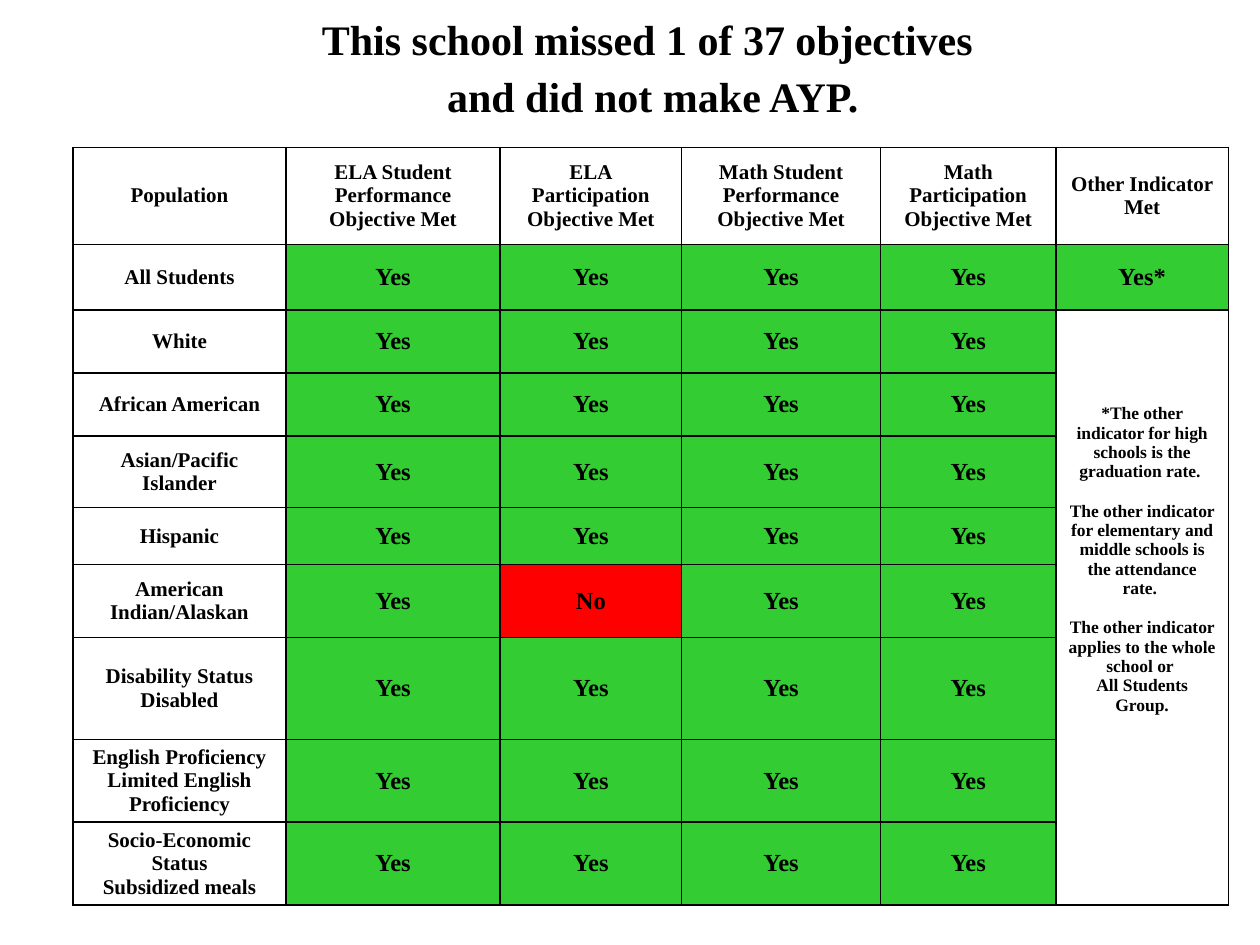
from lxml import etree
from pptx import Presentation, util as u
from pptx.dml.color import RGBColor
from pptx.enum import text
from pptx.oxml import ns

BLACK = RGBColor(0x00, 0x00, 0x00)
WHITE = RGBColor(0xFF, 0xFF, 0xFF)
GREEN = RGBColor(0x33, 0xCC, 0x33)
RED = RGBColor(0xFF, 0x00, 0x00)

COLUMN_WIDTHS = [1.69, 1.7, 1.44, 1.58, 1.39, 1.37]
ROW_HEIGHTS = [0.77, 0.52, 0.5, 0.5, 0.57, 0.45, 0.58, 0.81, 0.65, 0.66]
HEADINGS = [
    "Population",
    "ELA Student Performance Objective Met",
    "ELA\nParticipation Objective Met",
    "Math Student Performance Objective Met",
    "Math Participation Objective Met",
    "Other Indicator Met",
]
POPULATIONS = [
    "All Students",
    "White",
    "African American",
    "Asian/Pacific Islander",
    "Hispanic",
    "American Indian/Alaskan",
    "Disability Status\nDisabled",
    "English Proficiency\nLimited English Proficiency",
    "Socio-Economic Status\nSubsidized meals",
]
OBJECTIVE_COUNT = 4
MISSED = {("American Indian/Alaskan", 2)}  # population, column
INDICATOR_NOTE = (
    "*The other indicator for high schools is the graduation rate. \n"
    "The other indicator for elementary and middle schools is the attendance rate. \n"
    "The other indicator applies to the whole school or \n"
    "All Students Group."
)


class SlideBuilder:
    def __init__(self, slide, font="Times New Roman"):
        self.slide = slide
        self.font = font

    def style(self, text_frame, size):
        for paragraph in text_frame.paragraphs:
            paragraph.alignment = text.PP_ALIGN.CENTER
            for run in paragraph.runs:
                run.font.name = self.font
                run.font.size = u.Pt(size)
                run.font.bold = True
                run.font.color.rgb = BLACK

    def title(self, words, left, top, width, height):
        shape = self.slide.shapes.add_textbox(
            u.Inches(left), u.Inches(top), u.Inches(width), u.Inches(height))
        text_frame = shape.text_frame
        text_frame.word_wrap = True
        text_frame.text = words
        self.style(text_frame, 24)
        for paragraph in text_frame.paragraphs:
            paragraph.line_spacing = 0.7
            paragraph.space_before = u.Pt(12.5)

    def table(self, left, top, widths, heights):
        frame = self.slide.shapes.add_table(
            len(heights), len(widths), u.Inches(left), u.Inches(top),
            u.Inches(sum(widths)), u.Inches(sum(heights)))
        table = frame.table
        table.first_row = table.horz_banding = False
        for column, width in zip(table.columns, widths):
            column.width = u.Inches(width)
        for row, height in zip(table.rows, heights):
            row.height = u.Inches(height)
        for cell in table.iter_cells():
            self.borders(cell)
        return table

    def borders(self, cell):
        properties = cell._tc.get_or_add_tcPr()
        for side in ("a:lnL", "a:lnR", "a:lnT", "a:lnB"):
            line = etree.SubElement(properties, ns.qn(side), w=str(u.Pt(1)))
            fill = etree.SubElement(line, ns.qn("a:solidFill"))
            etree.SubElement(fill, ns.qn("a:srgbClr"), val=str(BLACK))

    def cell(self, cell, words, size=12, fill=WHITE):
        cell.text_frame.text = words
        cell.vertical_anchor = text.MSO_ANCHOR.MIDDLE
        cell.fill.solid()
        cell.fill.fore_color.rgb = fill
        self.style(cell.text_frame, size)

    def note(self, cell, words):
        self.cell(cell, words, size=10)
        cell.vertical_anchor = text.MSO_ANCHOR.TOP
        cell.margin_top = u.Inches(0.75)
        # One line of space before the second and third statements
        for paragraph in cell.text_frame.paragraphs[1:3]:
            paragraph.space_before = u.Pt(11.5)


def main():
    presentation = Presentation()
    presentation.slide_width = u.Inches(10)
    presentation.slide_height = u.Inches(7.5)
    builder = SlideBuilder(
        presentation.slides.add_slide(presentation.slide_layouts[6]))

    # Results table: headings, then one row per population
    table = builder.table(0.58, 1.17, COLUMN_WIDTHS, ROW_HEIGHTS)
    for column, heading in enumerate(HEADINGS):
        builder.cell(table.cell(0, column), heading)
    for row, population in enumerate(POPULATIONS, start=1):
        builder.cell(table.cell(row, 0), population)
        for column in range(1, OBJECTIVE_COUNT + 1):
            missed = (population, column) in MISSED
            builder.cell(table.cell(row, column), "No" if missed else "Yes",
                         size=14, fill=RED if missed else GREEN)

    # Other indicator: one result above a merged note
    last = len(COLUMN_WIDTHS) - 1
    builder.cell(table.cell(1, last), "Yes*", size=14, fill=GREEN)
    table.cell(2, last).merge(table.cell(len(POPULATIONS), last))
    builder.note(table.cell(2, last), INDICATOR_NOTE)

    # Title
    builder.title("This school missed 1 of 37 objectives \nand did not make AYP.",
                  0.58, 0.17, 9.2, 0.87)

    presentation.save("out.pptx")


if __name__ == "__main__":
    main()
